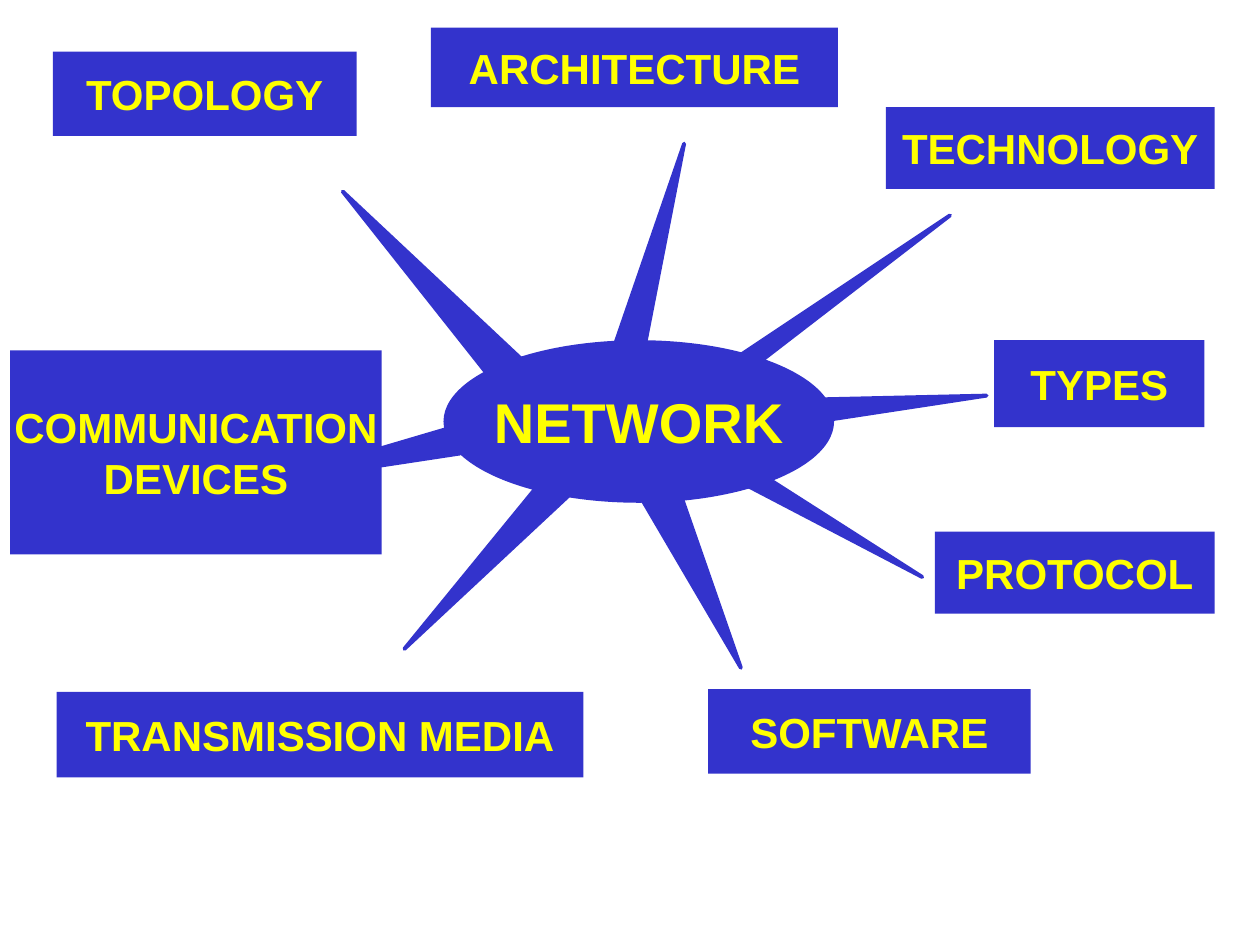
"""Build a mind-map slide of the aspects of a network."""
import pptx
import pptx.util
import pptx.dml.color
import pptx.enum.shapes
import pptx.enum.text

COLORS = {"back": "FFFFFF", "shape": "3333CC", "text": "FFFF00"}
RGB = {name: pptx.dml.color.RGBColor.from_string(c) for name, c in COLORS.items()}
RECT = pptx.enum.shapes.MSO_SHAPE.RECTANGLE
OVAL = pptx.enum.shapes.MSO_SHAPE.OVAL
COLUMNS, ROWS = 100, 75

prs = pptx.Presentation()
prs.slide_width = pptx.util.Inches(10)
prs.slide_height = pptx.util.Inches(7.5)
col = prs.slide_width / COLUMNS
row = prs.slide_height / ROWS
s = prs.slides.add_slide(prs.slide_layouts[6])
s.background.fill.solid()
s.background.fill.fore_color.rgb = RGB["back"]


def add_label(lines, left, top, width, height, kind=RECT, size=24):
    sp = s.shapes.add_shape(kind, round(left * col), round(top * row),
                            round(width * col), round(height * row))
    sp.shadow.inherit = False
    sp.fill.solid()
    sp.fill.fore_color.rgb = RGB["shape"]
    sp.line.fill.background()
    tf = sp.text_frame
    tf.word_wrap = False
    tf.vertical_anchor = pptx.enum.text.MSO_ANCHOR.MIDDLE
    for i, line in enumerate(lines):
        p = tf.add_paragraph() if i else tf.paragraphs[0]
        p.alignment = pptx.enum.text.PP_ALIGN.CENTER
        r = p.add_run()
        r.text = line
        r.font.name = "Arial"
        r.font.size = pptx.util.Pt(size)
        r.font.bold = True
        r.font.color.rgb = RGB["text"]


add_label(["NETWORK"], 35.2, 27, 31, 12.9, OVAL, 32)

spikes = [
    [(50.7, 39.2), (58.8, 53), (54, 39.2)],
    [(57.3, 37.5), (73.2, 45.8), (60.2, 37.5)],
    [(65.1, 31.7), (78.3, 31.4), (65.2, 33.4)],
    [(55.3, 30.5), (75.4, 17.1), (58.4, 30.2)],
    [(48, 29.7), (54.3, 11.4), (50.7, 29.9)],
    [(43.3, 30.3), (27.2, 15.2), (39.4, 30.6)],
    [(20.7, 38.4), (36.3, 33.8), (36.5, 36)],
    [(45.6, 38.9), (42.4, 38.9), (32.1, 51.5)],
]
for spike in spikes:
    points = [(round(x * col), round(y * row)) for x, y in spike]
    builder = s.shapes.build_freeform(*points[0])
    builder.add_line_segments(points[1:], close=True)
    sp = builder.convert_to_shape()
    sp.shadow.inherit = False
    sp.fill.solid()
    sp.fill.fore_color.rgb = RGB["shape"]
    sp.line.color.rgb = RGB["shape"]
    sp.line.width = pptx.util.Pt(2.25)

labels = [
    (["TOPOLOGY"], 4.2, 4.1, 24.1, 6.7),
    (["ARCHITECTURE"], 34.2, 2.2, 32.3, 6.3),
    (["TYPES"], 78.9, 27, 16.7, 6.9),
    (["TECHNOLOGY"], 70.3, 8.5, 26.1, 6.5),
    (["PROTOCOL"], 74.2, 42.2, 22.2, 6.5),
    (["SOFTWARE"], 56.2, 54.7, 25.6, 6.7),
    (["TRANSMISSION MEDIA"], 4.5, 54.9, 41.8, 6.8),
    (["COMMUNICATION", "DEVICES"], 0.8, 27.8, 29.5, 16.2),
]
for label in labels:
    add_label(*label)

prs.save("out.pptx")
